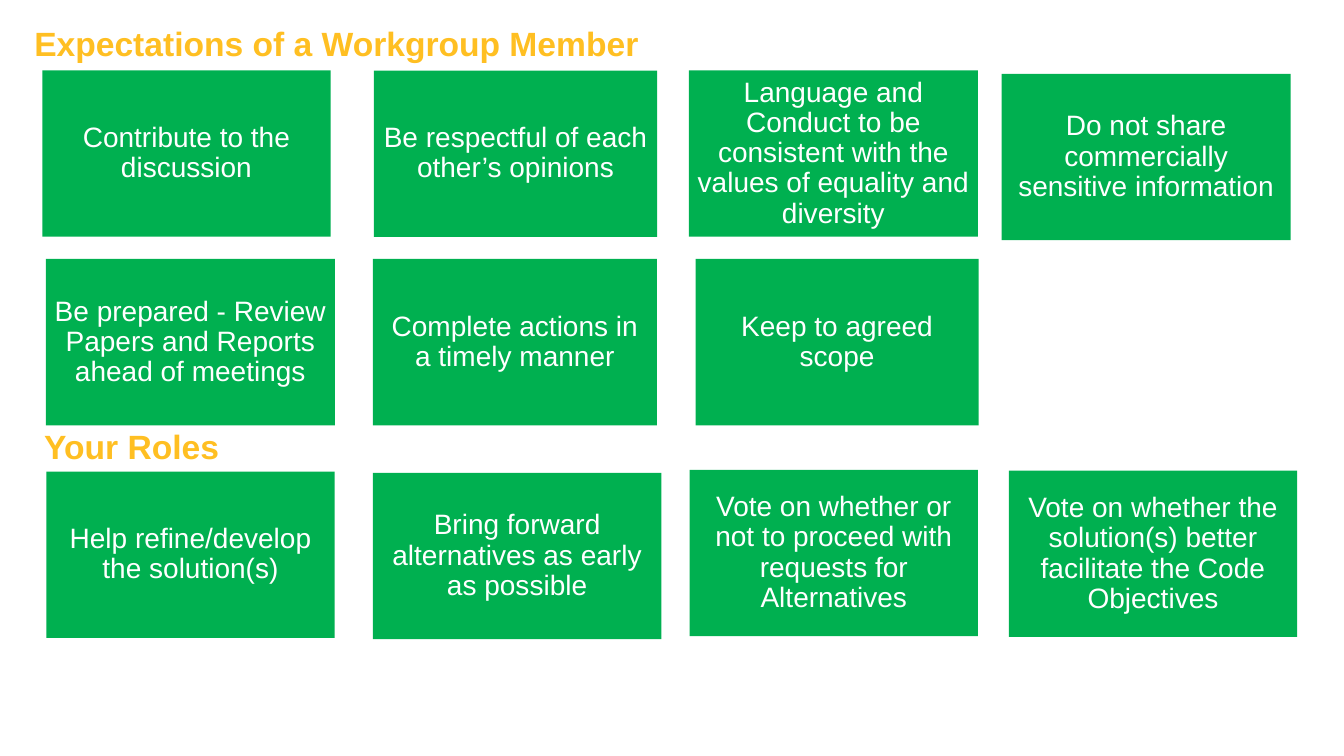
import pptx
import pptx.util
import pptx.dml.color
import pptx.enum.shapes
import pptx.enum.text

Pt = pptx.util.Pt
GREEN = pptx.dml.color.RGBColor(0x00, 0xB0, 0x50)
AMBER = pptx.dml.color.RGBColor(0xFF, 0xBF, 0x22)
WHITE = pptx.dml.color.RGBColor(0xFF, 0xFF, 0xFF)

HEADING_WIDTH, HEADING_HEIGHT = 893.5, 51.8
CARD_HEIGHT = 118.8
CARD_INSET = 6

EXPECTATIONS = [
    (12.9, 34.4, 206, "Contribute to the discussion"),
    (249.8, 34.6, 202.3, "Be respectful of each other’s opinions"),
    (474.7, 34.4, 206.6, "Language and Conduct to be consistent with the values of equality and diversity"),
    (698.1, 36.9, 206.6, "Do not share commercially sensitive information"),
    (15.4, 169.2, 206.6, "Be prepared - Review Papers and Reports ahead of meetings"),
    (249.1, 169.2, 202.8, "Complete actions in a timely manner"),
    (479.5, 169.2, 202.3, "Keep to agreed scope"),
]
ROLES = [
    (8.6, 33, 206, "Help refine/develop the solution(s)"),
    (241.9, 34, 206, "Bring forward alternatives as early as possible"),
    (468.1, 31.8, 206, "Vote on whether or not to proceed with requests for Alternatives"),
    (696.1, 32.4, 206, "Vote on whether the solution(s) better facilitate the Code Objectives"),
]


def write_text(shape, text, size, color, bold, align, anchor):
    frame = shape.text_frame
    frame.word_wrap = True
    frame.auto_size = pptx.enum.text.MSO_AUTO_SIZE.NONE
    frame.vertical_anchor = anchor
    frame.text = text
    para = frame.paragraphs[0]
    para.alignment = align
    para.line_spacing = 0.9
    font = para.runs[0].font
    font.name = "Arial"
    font.size = Pt(size)
    font.bold = bold
    font.color.rgb = color


def place_heading(heading, left, top, text):
    heading.left, heading.top = Pt(left), Pt(top)
    heading.width, heading.height = Pt(HEADING_WIDTH), Pt(HEADING_HEIGHT)
    write_text(heading, text, 24, AMBER, True,
               pptx.enum.text.PP_ALIGN.LEFT, pptx.enum.text.MSO_ANCHOR.TOP)


def add_card(page, left, top, width, text):
    card = page.shapes.add_shape(
        pptx.enum.shapes.MSO_SHAPE.RECTANGLE,
        Pt(left), Pt(top), Pt(width), Pt(CARD_HEIGHT))
    card.shadow.inherit = False
    card.fill.solid()
    card.fill.fore_color.rgb = GREEN
    card.line.fill.background()
    frame = card.text_frame
    frame.margin_left = frame.margin_right = Pt(CARD_INSET)
    frame.margin_top = frame.margin_bottom = Pt(CARD_INSET)
    write_text(card, text, 20, WHITE, False,
               pptx.enum.text.PP_ALIGN.CENTER, pptx.enum.text.MSO_ANCHOR.MIDDLE)


def add_section(page, heading, left, top, text, cards):
    place_heading(heading, left, top, text)
    for across, down, width, label in cards:
        add_card(page, left + across, top + down, width, label)


def main():
    deck = pptx.Presentation()
    deck.slide_width, deck.slide_height = Pt(960), Pt(540)
    page = deck.slides.add_slide(deck.slide_layouts[5])
    add_section(page, page.shapes.title, 17.3, 15.8,
                "Expectations of a Workgroup Member", EXPECTATIONS)
    roles_heading = page.shapes.add_textbox(0, 0, 0, 0)
    add_section(page, roles_heading, 24.5, 303.8, "Your Roles", ROLES)
    deck.save("out.pptx")


if __name__ == "__main__":
    main()
